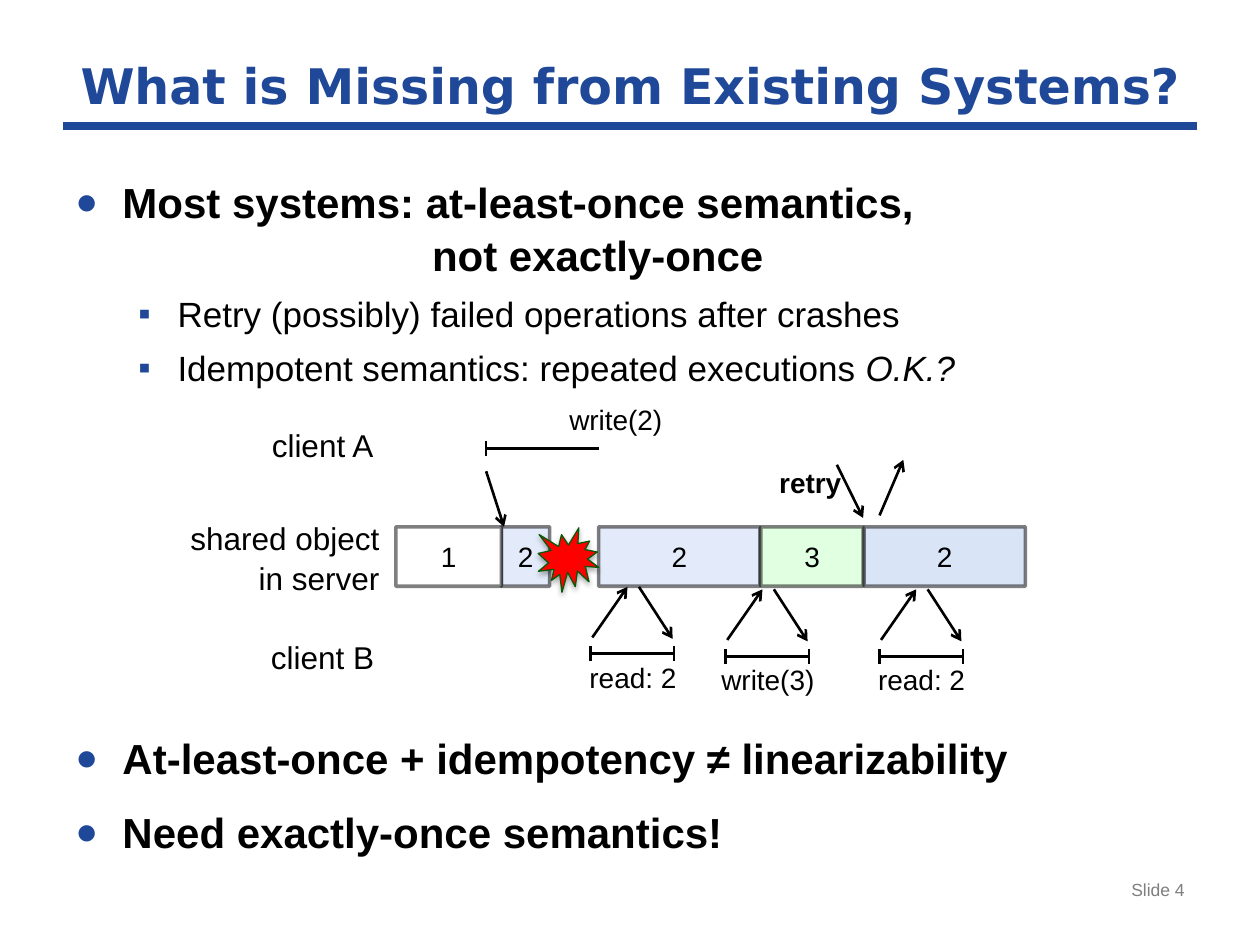
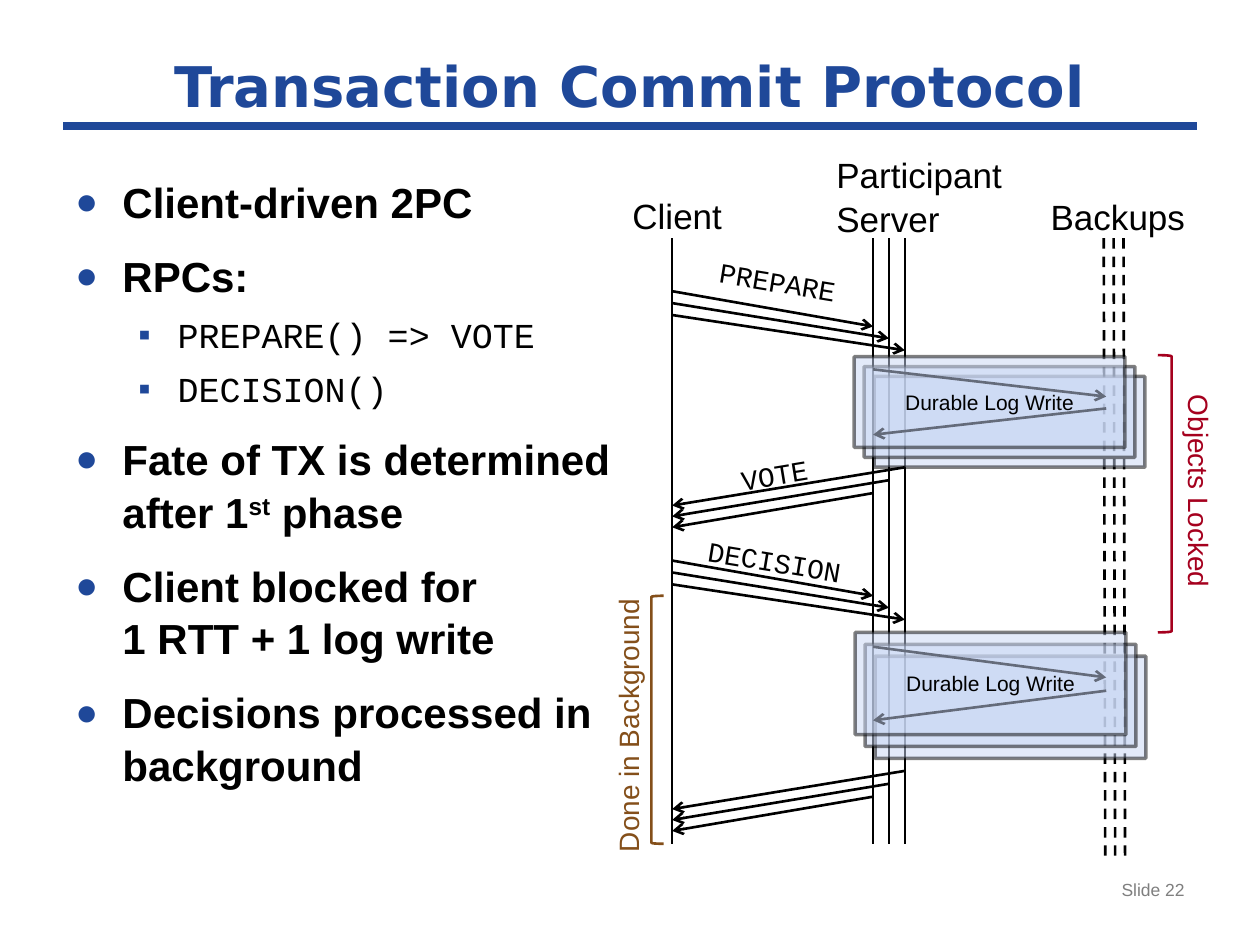
import pptx
import pptx.dml.color
import pptx.enum.dml
import pptx.enum.shapes
import pptx.enum.text
import pptx.oxml.ns
import pptx.util
from lxml import etree

Cm = pptx.util.Cm
Pt = pptx.util.Pt
qn = pptx.oxml.ns.qn
ALIGN = pptx.enum.text.PP_ALIGN
ANCHOR = pptx.enum.text.MSO_ANCHOR
SHAPE = pptx.enum.shapes.MSO_SHAPE

BLUE, BLACK, WHITE, GREY = "1F4899", "000000", "FFFFFF", "7F7F7F"
PALE_BLUE, LATE_BLUE, PALE_GREEN = "C9D7F4", "B7CBF0", "E1FFE1"
RED, DARK_GREEN, CRIMSON, BROWN = "FF0000", "095909", "A5001E", "844F1A"
SANS, MONO, TITLE_FONT = "Arial", "Courier New", "DejaVu Sans"

CLIENT_X = 13.55
SERVER_XS = [17.6 + 0.32 * i for i in range(3)]
BACKUP_XS = [22.25 + 0.2 * i for i in range(3)]


def color(code):
    return pptx.dml.color.RGBColor.from_string(code)


def add_xml(parent, tag, **attributes):
    values = {name: str(value) for name, value in attributes.items()}
    return etree.SubElement(parent, qn(tag), values)


def make_half_transparent(owner):
    add_xml(owner.find(qn("a:solidFill"))[0], "a:alpha", val=50000)


def add_span(para, text, size, font=SANS, tint=BLACK, bold=False, italic=False, raised=False):
    for number, line in enumerate(text.split("\n")):
        if number:
            para.add_line_break()
        span = para.add_run()
        span.text = line
        span.font.size = Pt(size)
        span.font.name = font
        span.font.bold = bold
        span.font.italic = italic
        span.font.color.rgb = color(tint)
        if raised:
            span.font.superscript = True if hasattr(span.font, "superscript") else None
            span._r.get_or_add_rPr().set("baseline", "30000")


def add_box(page, left, top, width, height, wrap=True):
    box = page.shapes.add_textbox(Cm(left), Cm(top), Cm(width), Cm(height))
    box.text_frame.word_wrap = wrap
    return box


def add_label(page, text, left, top, width, height=0.94, size=16, align=ALIGN.LEFT,
              turn=0, wrap=True, anchor=ANCHOR.TOP, **style):
    box = add_box(page, left, top, width, height, wrap)
    box.rotation = turn
    box.text_frame.vertical_anchor = anchor
    para = box.text_frame.paragraphs[0]
    para.alignment = align
    para.line_spacing = 1.05
    add_span(para, text, size, **style)


def add_bullet(para, sign, percent):
    properties = para._p.get_or_add_pPr()
    tint = add_xml(properties, "a:buClr")
    add_xml(tint, "a:srgbClr", val=BLUE)
    add_xml(properties, "a:buSzPct", val=percent * 1000)
    add_xml(properties, "a:buFont", typeface=SANS)
    add_xml(properties, "a:buChar", char=sign)


def set_indent(para, margin, hanging):
    properties = para._p.get_or_add_pPr()
    properties.set("marL", str(Cm(margin)))
    properties.set("indent", str(-Cm(hanging)))


def add_body(page, top, width, height, items):
    frame = add_box(page, 1.27, top, width, height).text_frame
    for number, (kind, spans) in enumerate(items):
        para = frame.paragraphs[0] if number == 0 else frame.add_paragraph()
        para.line_spacing = 1.05
        if kind == "point":
            para.space_before = Pt(12)
            set_indent(para, 0.95, 0.95)
            add_bullet(para, "●", 90)
        elif kind == "detail":
            para.space_before = Pt(6)
            set_indent(para, 2.06, 0.79)
            add_bullet(para, "▪", 100)
        else:
            set_indent(para, 7.19, 0)
        main_item = kind != "detail"
        for text, style in spans:
            add_span(para, text, 24 if main_item else 20, bold=main_item, **style)


def item(kind, text, **style):
    return kind, [(text, style)]


def add_line(page, start, end, width=1.5, arrow=False, dashed=False):
    line = page.shapes.add_connector(pptx.enum.shapes.MSO_CONNECTOR.STRAIGHT,
                                     *(Cm(value) for value in (*start, *end)))
    line.line.color.rgb = color(BLACK)
    line.line.width = Pt(width)
    if dashed:
        line.line.dash_style = pptx.enum.dml.MSO_LINE.DASH
    properties = line.element.spPr
    if arrow:
        add_xml(properties.find(qn("a:ln")), "a:tailEnd", type="arrow")
    add_xml(properties, "a:effectLst")
    return line


def add_arrow(page, start, end):
    add_line(page, start, end, arrow=True)


def add_form(page, form, left, top, width, height, fill, outline, weight):
    shape = page.shapes.add_shape(form, Cm(left), Cm(top), Cm(width), Cm(height))
    shape.shadow.inherit = False
    if fill:
        shape.fill.solid()
        shape.fill.fore_color.rgb = color(fill)
    else:
        shape.fill.background()
    shape.line.color.rgb = color(outline)
    shape.line.width = Pt(weight)
    return shape


def add_block(page, left, top, width, height, fill, text="", size=16, sheer=True):
    block = add_form(page, SHAPE.RECTANGLE, left, top, width, height, fill, BLACK, 2)
    properties = block.element.spPr
    make_half_transparent(properties.find(qn("a:ln")))
    if sheer:
        make_half_transparent(properties)
    if text:
        block.text_frame.vertical_anchor = ANCHOR.MIDDLE
        para = block.text_frame.paragraphs[0]
        para.alignment = ALIGN.CENTER
        add_span(para, text, size)


def add_crash(page):
    crash = add_form(page, SHAPE.EXPLOSION1, 10.85, 10.64, 1.22, 1.3, RED, DARK_GREEN, 0.75)
    effects = crash.element.spPr.find(qn("a:effectLst"))
    shadow = add_xml(effects, "a:outerShdw", blurRad=Pt(3.1), dist=Pt(1.8),
                     dir=5400000, rotWithShape=0)
    add_xml(add_xml(shadow, "a:srgbClr", val=BLACK), "a:alpha", val=35000)


def add_tick(page, x, y):
    add_line(page, (x, y - 0.15), (x, y + 0.15))


def add_client_call(page, text, left, y):
    right = left + 1.68
    add_line(page, (left, y), (right, y))
    add_tick(page, left, y)
    add_tick(page, right, y)
    add_arrow(page, (left + 0.03, y - 0.33), (left + 0.74, y - 1.35))
    add_arrow(page, (left + 0.97, y - 1.35), (left + 1.65, y - 0.3))
    add_label(page, text, left - 0.55, y - 0.03, 2.8, align=ALIGN.CENTER)


def add_requests(page, y):
    for i, x in enumerate(SERVER_XS):
        start = y + 0.24 * i
        add_arrow(page, (CLIENT_X, start), (x, start + 0.71))


def add_replies(page, y):
    for i, x in enumerate(reversed(SERVER_XS)):
        add_arrow(page, (x, y + 0.26 * i), (CLIENT_X, y + 0.77 + 0.22 * i))


def add_log_write(page, left, top, height, step):
    for i in (2, 1):
        add_block(page, left + 0.2 * i, top + step * i, 5.46, height, PALE_BLUE)
    near, far = SERVER_XS[0], BACKUP_XS[0] + 0.05
    add_arrow(page, (near, top + 0.14 * height), (far, top + 0.44 * height))
    add_arrow(page, (far, top + 0.57 * height), (near, top + 0.86 * height))
    add_block(page, left, top, 5.46, height, PALE_BLUE, "Durable Log Write", 12)


def add_bracket(page, left, top, width, height, tint, turn=0):
    bracket = add_form(page, SHAPE.RIGHT_BRACKET, left, top, width, height, None, tint, 1.5)
    bracket.rotation = turn


def start_page(deck, title, title_size, number):
    page = deck.slides.add_slide(deck.slide_layouts[6])
    rule = add_line(page, (1.27, 2.54), (24.13, 2.54), 4.5)
    rule.line.color.rgb = color(BLUE)
    add_label(page, title, 0, 0.84, 25.4, 1.7, title_size, ALIGN.CENTER,
              anchor=ANCHOR.MIDDLE, font=TITLE_FONT, tint=BLUE, bold=True)
    add_label(page, f"Slide {number}", 18.21, 17.58, 5.92, 1.09, 10, ALIGN.RIGHT, tint=GREY)
    return page


def build_missing_page(deck):
    page = start_page(deck, "What is Missing from Existing Systems?", 28, 4)
    add_body(page, 3.38, 22.86, 4.6, [
        item("point", "Most systems: at-least-once semantics,"),
        item("continued", "not exactly-once"),
        item("detail", "Retry (possibly) failed operations after crashes"),
        ("detail", [("Idempotent semantics: repeated executions ", {}),
                    ("O.K.?", {"italic": True})]),
    ])
    add_body(page, 14.59, 22.86, 2.6, [
        item("point", "At-least-once + idempotency ≠ linearizability"),
        item("point", "Need exactly-once semantics!"),
    ])
    add_label(page, "client A", 5.23, 8.43, 2.97, 1.02, 18)
    add_label(page, "shared object\nin server", 3.43, 10.31, 4.47, 1.8, 18, ALIGN.RIGHT)
    add_label(page, "client B", 5.21, 12.7, 2.97, 1.02, 18)

    for text, left, width, fill, sheer in [
        ("2", 10.11, 0.97, PALE_BLUE, True),
        ("1", 7.98, 2.13, WHITE, False),
        ("2", 12.07, 3.25, PALE_BLUE, True),
        ("3", 15.34, 2.06, PALE_GREEN, False),
        ("2", 17.42, 3.25, LATE_BLUE, True),
    ]:
        add_block(page, left, 10.62, width, 1.2, fill, text, sheer=sheer)
    add_crash(page)

    add_label(page, "write(2)", 11.02, 7.95, 2.79, align=ALIGN.CENTER)
    add_line(page, (9.8, 9.04), (12.07, 9.04))
    add_tick(page, 9.8, 9.04)
    add_arrow(page, (9.8, 9.5), (10.16, 10.62))
    add_arrow(page, (16.87, 9.37), (17.4, 10.44))
    add_arrow(page, (17.73, 10.39), (18.21, 9.27))
    add_label(page, "retry", 15.14, 9.22, 2.39, align=ALIGN.CENTER, bold=True)

    for text, left, y in [("read: 2", 11.91, 13.18), ("write(3)", 14.63, 13.23),
                          ("read: 2", 17.73, 13.23)]:
        add_client_call(page, text, left, y)


def build_commit_page(deck):
    page = start_page(deck, "Transaction Commit Protocol", 32, 22)
    for x in BACKUP_XS:
        add_line(page, (x, 4.8), (x + 0.03, 17.25), dashed=True)
    for x in SERVER_XS:
        add_line(page, (x, 4.8), (x, 17.02), 1)
    add_line(page, (CLIENT_X, 4.8), (CLIENT_X, 17.02))

    for text, left, top, width, height in [
        ("Client", 12.5, 3.76, 2.34, 1.12),
        ("Participant\nServer", 16.61, 2.92, 3.89, 1.96),
        ("Backups", 20.93, 3.78, 3.25, 1.12),
    ]:
        add_label(page, text, left, top, width, height, 20, wrap=False)
    for text, left, top, width, turn in [
        ("PREPARE", 14.25, 5.18, 2.9, 9.3),
        ("VOTE", 14.68, 9.07, 1.88, 350.6),
        ("DECISION", 14.02, 10.82, 3.25, 9.3),
    ]:
        add_label(page, text, left, top, width, turn=turn, wrap=False, font=MONO)

    add_requests(page, 5.87)
    add_log_write(page, 17.22, 7.19, 1.83, 0.2)
    add_replies(page, 9.42)
    add_requests(page, 11.3)
    add_log_write(page, 17.24, 12.75, 2.06, 0.24)
    add_replies(page, 15.54)

    add_body(page, 3.38, 11.43, 13.64, [
        item("point", "Client-driven 2PC"),
        item("point", "RPCs:"),
        item("detail", "PREPARE() => VOTE", font=MONO),
        item("detail", "DECISION()", font=MONO),
        ("point", [("Fate of TX is determined after 1", {}), ("st", {"raised": True}),
                   (" phase", {})]),
        item("point", "Client blocked for\n1 RTT + 1 log write"),
        item("point", "Decisions processed in background"),
    ])
    add_bracket(page, 23.34, 7.16, 0.28, 5.59, CRIMSON)
    add_label(page, "Objects Locked", 21.84, 9.6, 4.72, turn=90, tint=CRIMSON)
    add_bracket(page, 13.13, 12.01, 0.25, 5, BROWN, 180)
    add_label(page, "Done in Background", 9.75, 14.07, 5.77, turn=270, tint=BROWN)


def main():
    deck = pptx.Presentation()
    deck.slide_width, deck.slide_height = Cm(25.4), Cm(19.05)
    build_missing_page(deck)
    build_commit_page(deck)
    deck.save("out.pptx")


if __name__ == "__main__":
    main()
